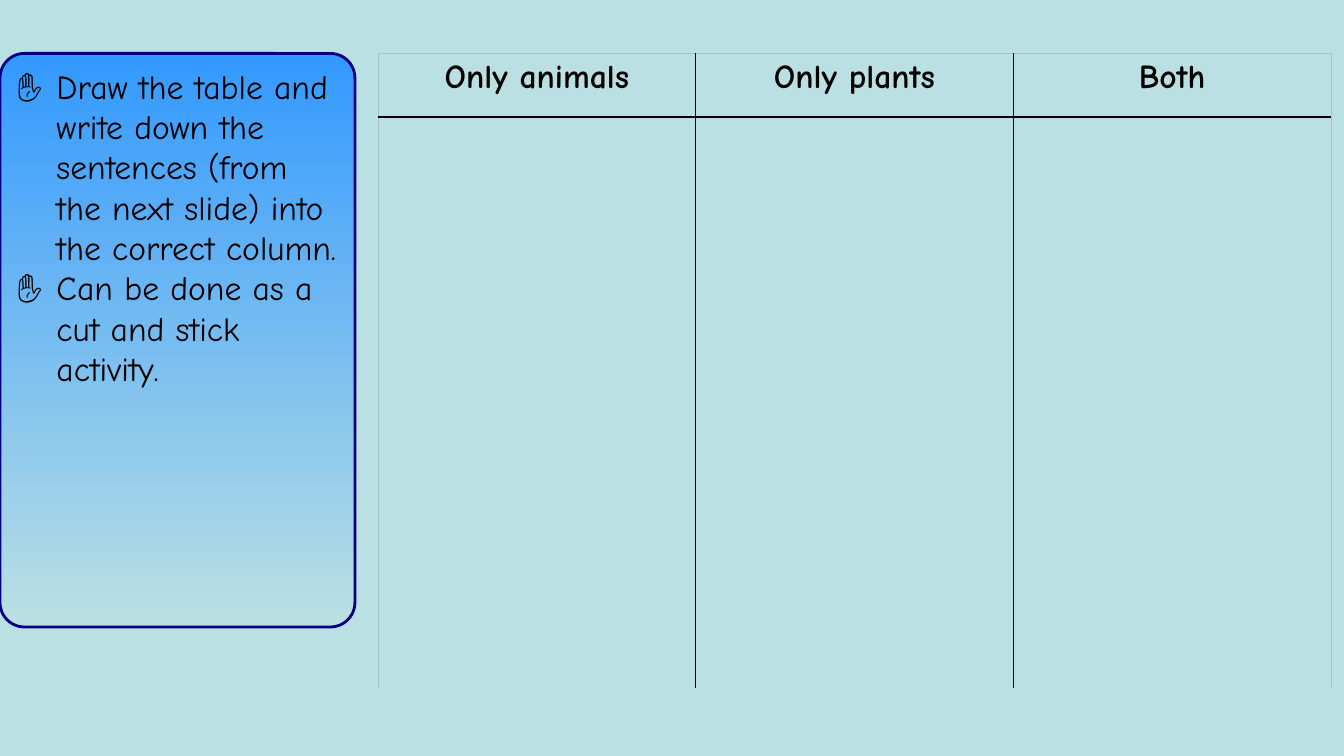
from dataclasses import dataclass

from lxml import etree
from pptx import Presentation
from pptx import util as u
from pptx.dml import color
from pptx.enum import shapes, text
from pptx.oxml import ns

EMU_PER_PX = 9144


@dataclass(frozen=True)
class Theme:
    font: str = "Comic Neue"
    size: int = 24
    ink: str = "000000"
    background: str = "BBE0E3"
    panel_top: str = "3399FF"
    panel_line: str = "000080"
    panel_line_width: int = 2
    frame: str = "A5C4C7"
    frame_width: float = 0.25
    rule_width: float = 1


@dataclass(frozen=True)
class Box:
    left: int
    top: int
    width: int
    height: int

    def emu(self) -> tuple:
        return tuple(px(n) for n in (self.left, self.top, self.width, self.height))

    def inset(self, margin: int) -> "Box":
        return Box(self.left + margin, self.top + margin,
                   self.width - 2 * margin, self.height - 2 * margin)


THEME = Theme()
PAGE = Box(0, 0, 1333, 750)
PANEL = Box(0, 53, 352, 569)
PANEL_INSET = 7
PANEL_ROUNDING = 0.069
BULLET = "✋"
BULLET_INDENT = 39
GRID = Box(375, 53, 945, 630)
HEADER_HEIGHT = 63
HEADERS = ("Only animals", "Only plants", "Both")
TASKS = (
    "Draw the table and write down the sentences (from the next slide) into the correct column.",
    "Can be done as a cut and stick activity.",
)


def px(length: int) -> u.Emu:
    return u.Emu(length * EMU_PER_PX)


def rgb(value: str) -> color.RGBColor:
    return color.RGBColor.from_string(value)


def write(para, content: str, *, bold: bool = False, align=text.PP_ALIGN.LEFT) -> None:
    para.alignment = align
    para.space_before = u.Pt(0)
    span = para.add_run()
    span.text = content
    span.font.name = THEME.font
    span.font.size = u.Pt(THEME.size)
    span.font.bold = bold
    span.font.color.rgb = rgb(THEME.ink)


def add_bullet(para) -> None:
    properties = para._p.get_or_add_pPr()
    properties.set("marL", str(px(BULLET_INDENT)))
    properties.set("indent", str(-px(BULLET_INDENT)))
    etree.SubElement(properties, ns.qn("a:buChar")).set("char", BULLET)


def draw_panel(page) -> None:
    panel = page.shapes.add_shape(shapes.MSO_SHAPE.ROUNDED_RECTANGLE, *PANEL.emu())
    panel.shadow.inherit = False
    panel.adjustments[0] = PANEL_ROUNDING
    panel.fill.gradient()
    panel.fill.gradient_angle = 270
    for stop, value in zip(panel.fill.gradient_stops, (THEME.panel_top, THEME.background)):
        stop.color.rgb = rgb(value)
    panel.line.color.rgb = rgb(THEME.panel_line)
    panel.line.width = u.Pt(THEME.panel_line_width)


def fill_task_list(body) -> None:
    body.left, body.top, body.width, body.height = PANEL.inset(PANEL_INSET).emu()
    frame = body.text_frame
    frame.word_wrap = True
    frame.auto_size = text.MSO_AUTO_SIZE.NONE
    frame.vertical_anchor = text.MSO_ANCHOR.TOP
    for index, task in enumerate(TASKS):
        para = frame.add_paragraph() if index else frame.paragraphs[0]
        write(para, task)
        add_bullet(para)


def set_border(cell, side: str, value: str, width: float) -> None:
    line = etree.Element(ns.qn(f"a:{side}"), w=str(u.Pt(width)))
    if width:
        fill = etree.SubElement(line, ns.qn("a:solidFill"))
        etree.SubElement(fill, ns.qn("a:srgbClr")).set("val", value)
    else:
        etree.SubElement(line, ns.qn("a:noFill"))
    cell._tc.get_or_add_tcPr().append(line)


def draw_grid(page) -> None:
    columns = len(HEADERS)
    table = page.shapes.add_table(2, columns, *GRID.emu()).table
    table.first_row = table.horz_banding = False
    for row, height in zip(table.rows, (HEADER_HEIGHT, GRID.height - HEADER_HEIGHT)):
        row.height = px(height)
    for index, header in enumerate(HEADERS):
        table.columns[index].width = px(GRID.width // columns)
        write(table.cell(0, index).text_frame.paragraphs[0], header,
              bold=True, align=text.PP_ALIGN.CENTER)
        for row in range(2):
            cell = table.cell(row, index)
            rule = (THEME.ink, THEME.rule_width)
            edge = (THEME.frame, THEME.frame_width)
            set_border(cell, "lnL", *(rule if index else edge))
            set_border(cell, "lnR", *(rule if index < columns - 1 else edge))
            set_border(cell, "lnT", *(rule if row else edge))
            set_border(cell, "lnB", *((THEME.ink, 0) if row else rule))
            cell.fill.background()


def main() -> None:
    deck = Presentation()
    deck.slide_width, deck.slide_height = px(PAGE.width), px(PAGE.height)
    page = deck.slides.add_slide(deck.slide_layouts[1])
    page.background.fill.solid()
    page.background.fill.fore_color.rgb = rgb(THEME.background)
    title, body = page.placeholders
    title.element.getparent().remove(title.element)
    draw_grid(page)
    draw_panel(page)
    fill_task_list(body)
    page.shapes._spTree.append(body.element)
    deck.save("out.pptx")


if __name__ == "__main__":
    main()
